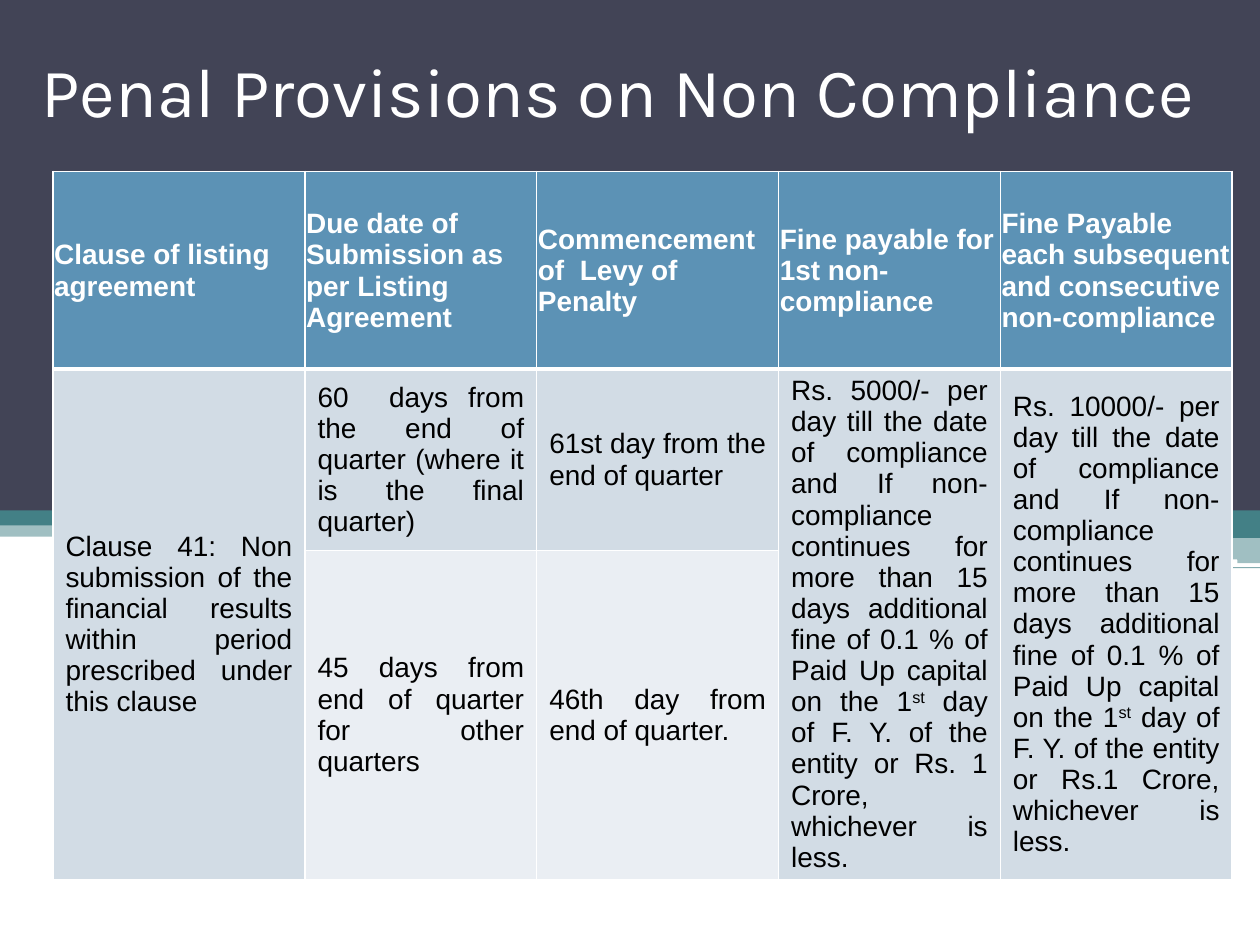
from dataclasses import dataclass
from lxml.etree import SubElement
from pptx import Presentation
from pptx.dml.color import RGBColor
from pptx.enum.shapes import MSO_SHAPE
from pptx.enum.text import MSO_ANCHOR, PP_ALIGN
from pptx.oxml.ns import qn
from pptx.util import Inches, Pt


@dataclass(frozen=True)
class Theme:
    dark: str = "424456"
    teal: str = "438086"
    white: str = "FFFFFF"
    black: str = "000000"
    header: str = "5C92B5"
    odd: str = "D2DCE5"
    even: str = "EAEEF3"
    title_font: str = "Karla"
    body_font: str = "Arial"
    title_size: float = 39.6
    body_size: float = 16
    rule: float = 1
    header_rule: float = 3


@dataclass(frozen=True)
class Band:
    left: float
    top: float
    width: float
    height: float
    color: str
    alpha: int = 100
    rounded: bool = False


@dataclass(frozen=True)
class Entry:
    row: int
    col: int
    text: str
    fill: str
    rows: int = 1


T = Theme()

BANDS = [
    Band(5.92, 4.17, 4.08, 0.1, T.teal),
    Band(5.92, 4.26, 4.08, 0.21, T.teal, 50),
    Band(5.92, 4.5, 4.08, 0.01, T.teal, 65),
    Band(5.92, 4.55, 2.15, 0.02, T.teal, 60),
    Band(5.92, 4.59, 2.15, 0.01, T.teal, 65),
    Band(5.92, 4.33, 3.35, 0.03, T.white, rounded=True),
    Band(8.07, 4.44, 1.75, 0.04, T.white, rounded=True),
    Band(0, 3.99, 10, 0.27, T.teal, 50),
    Band(0, 4.02, 10, 0.15, T.teal),
    Band(7.01, 3.98, 2.99, 0.27, T.teal),
    Band(0, 0, 10, 4.05, T.dark),
]

COLS = [2, 1.84, 1.92, 1.76, 1.84]
ROWS = [1.57, 1.44, 2.24]
HEADERS = [
    "Clause of listing agreement",
    "Due date of Submission as per Listing Agreement",
    "Commencement of  Levy of Penalty",
    "Fine payable for 1st non-compliance",
    "Fine Payable each subsequent and consecutive non-compliance",
]
FINE = ("Rs. {}/- per day till the date of compliance and If non-compliance continues "
        "for more than 15 days additional fine of 0.1 % of Paid Up capital on the "
        "1^st^ day of F. Y. of the entity or {} Crore, whichever is less.")
ENTRIES = [
    Entry(1, 0, "Clause 41: Non submission of the financial results within period "
                "prescribed under this clause", T.odd, 2),
    Entry(1, 1, "60  days from the end of quarter (where it is the final quarter)", T.odd),
    Entry(1, 2, "61st day from the end of quarter", T.odd),
    Entry(1, 3, FINE.format("5000", "Rs. 1"), T.odd, 2),
    Entry(1, 4, FINE.format("10000", "Rs.1"), T.odd, 2),
    Entry(2, 1, "45 days from end of quarter for other quarters", T.even),
    Entry(2, 2, "46th day from end of quarter.", T.even),
]


def write(tf, text: str, *, size: float, font: str, color: str,
          bold: bool = False, align=PP_ALIGN.LEFT) -> None:
    tf.word_wrap = True
    p = tf.paragraphs[0]
    p.alignment = align
    for i, part in enumerate(text.split("^")):
        r = p.add_run()
        r.text = part
        r.font.size = Pt(size)
        r.font.name = font
        r.font.bold = bold
        r.font.color.rgb = RGBColor.from_string(color)
        if i % 2:
            r._r.get_or_add_rPr().set("baseline", "30000")


def draw_band(s, band: Band):
    kind = MSO_SHAPE.ROUNDED_RECTANGLE if band.rounded else MSO_SHAPE.RECTANGLE
    sp = s.shapes.add_shape(kind, Inches(band.left), Inches(band.top),
                            Inches(band.width), Inches(band.height))
    sp.shadow.inherit = False
    sp.line.fill.background()
    sp.fill.solid()
    sp.fill.fore_color.rgb = RGBColor.from_string(band.color)
    if band.alpha < 100:
        clr = sp.element.spPr.find(qn("a:solidFill"))[0]
        SubElement(clr, qn("a:alpha"), val=str(band.alpha * 1000))
    return sp


def set_borders(cell, **widths: float) -> None:
    tcPr = cell._tc.get_or_add_tcPr()
    for side, width in widths.items():
        ln = SubElement(tcPr, qn(f"a:ln{side}"), w=str(Pt(width)))
        fill = SubElement(ln, qn("a:solidFill"))
        SubElement(fill, qn("a:srgbClr"), val=T.white)


def paint(cell, color: str) -> None:
    cell.fill.solid()
    cell.fill.fore_color.rgb = RGBColor.from_string(color)
    cell.vertical_anchor = MSO_ANCHOR.MIDDLE


def draw_table(s) -> None:
    frame = s.shapes.add_table(len(ROWS), len(COLS), Inches(0.42), Inches(1.36),
                               Inches(sum(COLS)), Inches(sum(ROWS)))
    tbl = frame.table
    tbl.horz_banding = False
    for col, width in zip(tbl.columns, COLS):
        col.width = Inches(width)
    for i, (row, height) in enumerate(zip(tbl.rows, ROWS)):
        row.height = Inches(height)
        for cell in row.cells:
            set_borders(cell, L=T.rule, R=T.rule,
                        T=T.header_rule if i == 1 else T.rule,
                        B=T.header_rule if i == 0 else T.rule)
            paint(cell, T.odd)
    for cell, text in zip(tbl.rows[0].cells, HEADERS):
        paint(cell, T.header)
        cell.margin_left = cell.margin_right = cell.margin_top = Inches(0.01)
        cell.margin_bottom = 0
        write(cell.text_frame, text, size=T.body_size, font=T.body_font,
              color=T.white, bold=True)
    for e in ENTRIES:
        cell = tbl.cell(e.row, e.col)
        if e.rows > 1:
            cell.merge(tbl.cell(e.row + e.rows - 1, e.col))
        paint(cell, e.fill)
        write(cell.text_frame, e.text, size=T.body_size, font=T.body_font,
              color=T.black, align=PP_ALIGN.JUSTIFY)


def main() -> None:
    prs = Presentation()
    prs.slide_width, prs.slide_height = Inches(10), Inches(7.5)
    s = prs.slides.add_slide(prs.slide_layouts[5])
    s.background.fill.solid()
    s.background.fill.fore_color.rgb = RGBColor.from_string(T.white)
    title = s.shapes.title
    for band in BANDS:
        title.element.addprevious(draw_band(s, band).element)
    title.left, title.top = Inches(0.23), Inches(0.31)
    title.width, title.height = Inches(9.45), Inches(0.78)
    title.text_frame.vertical_anchor = MSO_ANCHOR.BOTTOM
    write(title.text_frame, "Penal Provisions on Non Compliance",
          size=T.title_size, font=T.title_font, color=T.white)
    draw_table(s)
    prs.save("out.pptx")


if __name__ == "__main__":
    main()
